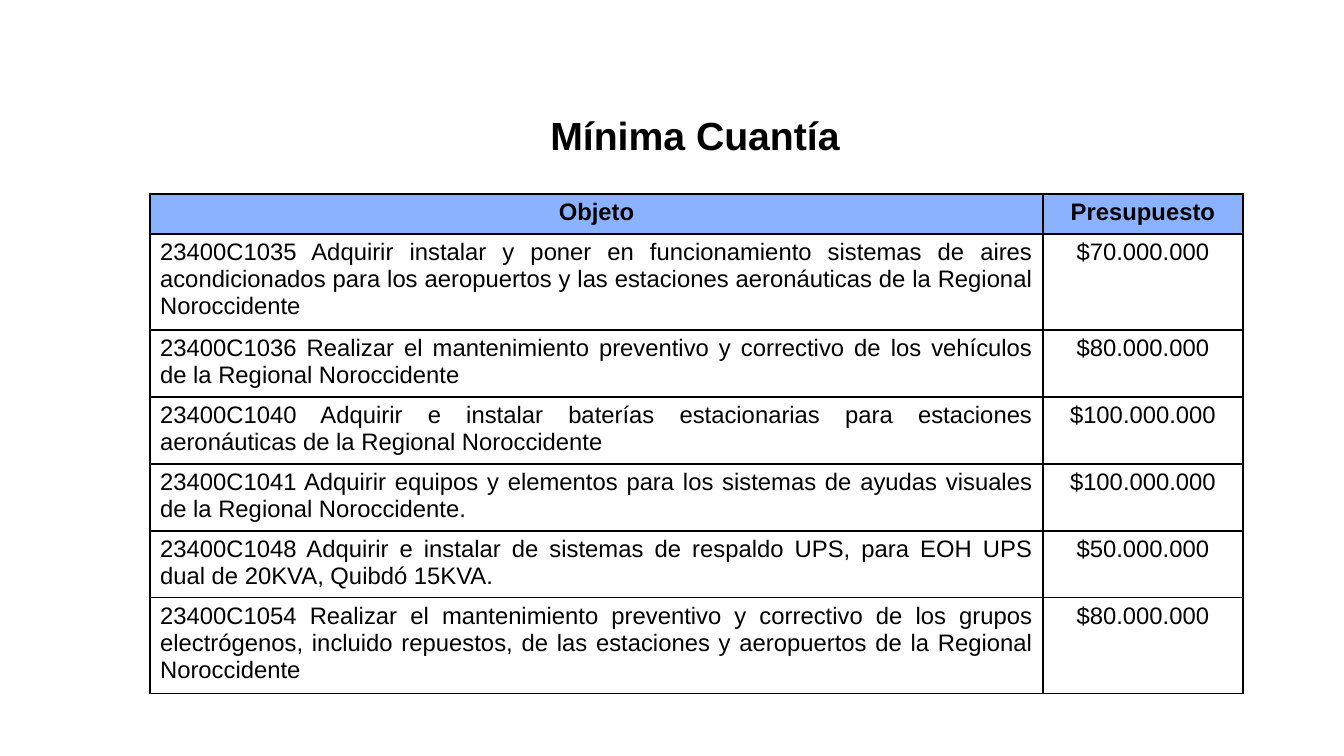
import lxml.etree
import pptx
import pptx.dml.color
import pptx.enum.text
import pptx.oxml.ns
import pptx.util

PX = 914400 / 100.8
BLACK = pptx.dml.color.RGBColor(0x00, 0x00, 0x00)
HEADER_BLUE = pptx.dml.color.RGBColor(0x8B, 0xB2, 0xFF)
ALIGN = pptx.enum.text.PP_ALIGN

ROWS = [
    ("Objeto", "Presupuesto", 40),
    ("23400C1035 Adquirir instalar y poner en funcionamiento sistemas de aires acondicionados "
     "para los aeropuertos y las estaciones aeronáuticas de la Regional Noroccidente",
     "$70.000.000", 96),
    ("23400C1036 Realizar el mantenimiento preventivo y correctivo de los vehículos "
     "de la Regional Noroccidente", "$80.000.000", 67),
    ("23400C1040 Adquirir e instalar baterías estacionarias para estaciones "
     "aeronáuticas de la Regional Noroccidente", "$100.000.000", 67),
    ("23400C1041 Adquirir equipos y elementos para los sistemas de ayudas visuales "
     "de la Regional Noroccidente.", "$100.000.000", 67),
    ("23400C1048 Adquirir e instalar de sistemas de respaldo UPS, para EOH UPS "
     "dual de 20KVA, Quibdó 15KVA.", "$50.000.000", 67),
    ("23400C1054 Realizar el mantenimiento preventivo y correctivo de los grupos "
     "electrógenos, incluido repuestos, de las estaciones y aeropuertos de la Regional "
     "Noroccidente", "$80.000.000", 96),
]
COLUMN_WIDTHS = [893, 200]


def px(length):
    return pptx.util.Emu(round(length * PX))


def write(text_frame, text, size, bold, alignment):
    paragraph = text_frame.paragraphs[0]
    paragraph.alignment = alignment
    run = paragraph.add_run()
    run.text = text
    run.font.name = "Arial"
    run.font.size = pptx.util.Pt(size)
    run.font.bold = bold
    run.font.color.rgb = BLACK


# Slide
presentation = pptx.Presentation()
presentation.slide_width = px(1344)
presentation.slide_height = px(756)
slide = presentation.slides.add_slide(presentation.slide_layouts[5])

# Title
title = slide.shapes.title
title.left, title.top, title.width, title.height = px(173), px(106), px(1044), px(57)
title.text_frame.vertical_anchor = pptx.enum.text.MSO_ANCHOR.MIDDLE
write(title.text_frame, "Mínima Cuantía", 28, True, ALIGN.CENTER)

# Budget table
table = slide.shapes.add_table(
    len(ROWS), len(COLUMN_WIDTHS), px(150), px(194),
    px(sum(COLUMN_WIDTHS)), px(sum(row[2] for row in ROWS))).table
table.first_row = False
table.horz_banding = False
for column, width in zip(table.columns, COLUMN_WIDTHS):
    column.width = px(width)

for row_index, (purpose, budget, height) in enumerate(ROWS):
    table.rows[row_index].height = px(height)
    is_header = row_index == 0
    for column_index, text in enumerate((purpose, budget)):
        cell = table.cell(row_index, column_index)
        justified = column_index == 0 and not is_header
        write(cell.text_frame, text, 17, is_header,
              ALIGN.JUSTIFY if justified else ALIGN.CENTER)

        # Borders go before the fill in the cell properties
        properties = cell._tc.get_or_add_tcPr()
        for side in ("lnL", "lnR", "lnT", "lnB"):
            border = lxml.etree.SubElement(
                properties, pptx.oxml.ns.qn("a:" + side), w=str(pptx.util.Pt(1)))
            solid = lxml.etree.SubElement(border, pptx.oxml.ns.qn("a:solidFill"))
            lxml.etree.SubElement(solid, pptx.oxml.ns.qn("a:srgbClr"), val=str(BLACK))

        if is_header:
            cell.fill.solid()
            cell.fill.fore_color.rgb = HEADER_BLUE
        else:
            cell.fill.background()

presentation.save("out.pptx")
